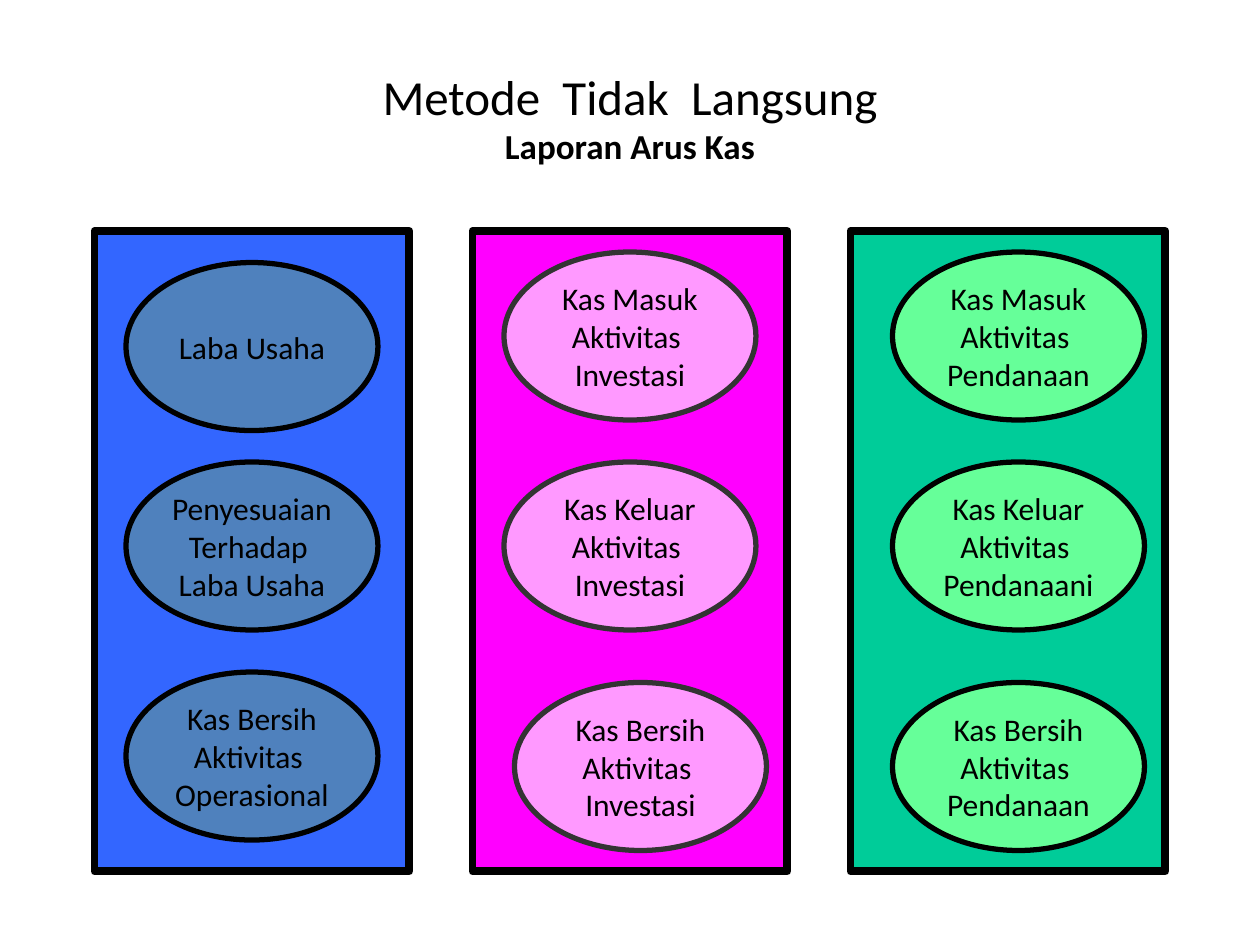
import copy
import pptx
import pptx.dml.color
import pptx.enum.shapes
import pptx.enum.text
import pptx.util

SHAPES = pptx.enum.shapes.MSO_SHAPE
ALIGN = pptx.enum.text.PP_ALIGN
ANCHOR = pptx.enum.text.MSO_ANCHOR
UNIT = pptx.util.Inches(1) // 12
INK = {
    "black": "000000", "gray": "333333",
    "blue": "3366FF", "steel": "4F81BD",
    "magenta": "FF00FF", "pink": "FF99FF",
    "teal": "00CC99", "mint": "66FF99",
}
HEAD = {"name": "Calibri", "size": pptx.util.Pt(28), "bold": False}
SUB = {"name": "Calibri", "size": pptx.util.Pt(20), "bold": True}
BODY = {"name": "Calibri", "size": pptx.util.Pt(18)}
FRAME = {"word_wrap": False, "vertical_anchor": ANCHOR.MIDDLE}
PANELS = [
    ("blue", "steel", "black", [
        (3, 3, ["Laba Usaha"]),
        (3, 22, ["Penyesuaian", "Terhadap ", "Laba Usaha"]),
        (3, 42, ["Kas Bersih", "Aktivitas ", "Operasional"]),
    ]),
    ("magenta", "pink", "gray", [
        (3, 2, ["Kas Masuk", "Aktivitas ", "Investasi"]),
        (3, 22, ["Kas Keluar", "Aktivitas ", "Investasi"]),
        (4, 43, ["Kas Bersih", "Aktivitas ", "Investasi"]),
    ]),
    ("teal", "mint", "black", [
        (4, 2, ["Kas Masuk", "Aktivitas ", "Pendanaan"]),
        (4, 22, ["Kas Keluar", "Aktivitas ", "Pendanaani"]),
        (4, 43, ["Kas Bersih", "Aktivitas ", "Pendanaan"]),
    ]),
]


def tint(name):
    return pptx.dml.color.RGBColor.from_string(INK[name])


def apply(item, look):
    for key, value in look.items():
        setattr(item, key, value)


def write(para, text, look):
    para.alignment = ALIGN.CENTER
    run = para.add_run()
    run.text = text
    apply(run.font, look)
    run.font.color.rgb = tint("black")
    return run


def draw(slide, kind, box, fill, edge, width):
    shape = slide.shapes.add_shape(kind, *(round(n * UNIT) for n in box))
    shape.shadow.inherit = False
    shape.fill.solid()
    shape.fill.fore_color.rgb = tint(fill)
    shape.line.color.rgb = tint(edge)
    shape.line.width = pptx.util.Pt(width)
    return shape


def title(slide, box):
    shape = slide.shapes.title
    sides = ("left", "top", "width", "height")
    apply(shape, {side: round(n * UNIT) for side, n in zip(sides, box)})
    shape.text_frame.vertical_anchor = ANCHOR.MIDDLE
    para = shape.text_frame.paragraphs[0]
    run = write(para, "Metode  Tidak  Langsung", HEAD)
    para.add_line_break()
    para._p[-1].append(copy.deepcopy(run._r.rPr))
    write(para, "Laporan Arus Kas", SUB)


def oval(slide, box, lines, fill, edge):
    frame = draw(slide, SHAPES.OVAL, box, fill, edge, 3).text_frame
    apply(frame, FRAME)
    for row, line in enumerate(lines):
        para = frame.add_paragraph() if row else frame.paragraphs[0]
        write(para, line, BODY)


def panel(slide, box, back, fill, edge, steps):
    draw(slide, SHAPES.RECTANGLE, box, back, "black", 4.5)
    left, top = box[:2]
    for col, row, lines in steps:
        oval(slide, (left + col, top + row, 24, 16), lines, fill, edge)


def main():
    deck = pptx.Presentation()
    deck.slide_width = 120 * UNIT
    deck.slide_height = 90 * UNIT
    slide = deck.slides.add_slide(deck.slide_layouts[5])
    title(slide, (6, 3.6, 108, 15))
    for col, parts in enumerate(PANELS):
        panel(slide, (9 + 36 * col, 22, 30, 61), *parts)
    deck.save("out.pptx")


if __name__ == "__main__":
    main()
